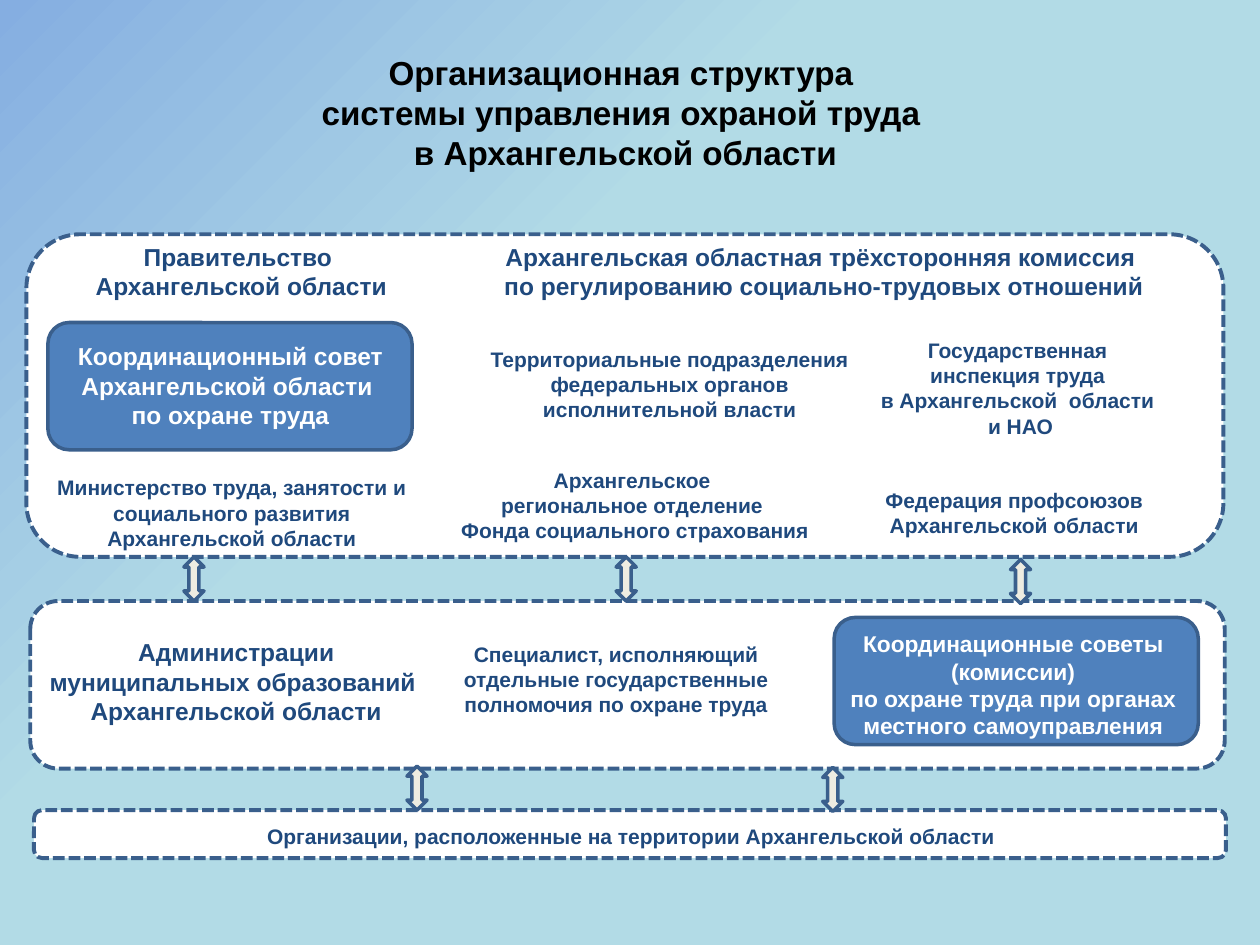
from copy import deepcopy
from pptx import Presentation
from pptx import util as u
from pptx.dml import color
from pptx.enum import dml, shapes, text
from pptx.oxml import ns

NAVY, WHITE, EDGE = "1F497D", "FFFFFF", "3A5F8C"


def rgb(value):
    return color.RGBColor.from_string(value)


class Deck:
    font = {"name": "Arial", "bold": True}
    frame = {"word_wrap": True, "auto_size": text.MSO_AUTO_SIZE.SHAPE_TO_FIT_TEXT}

    def __init__(self, prs):
        self.s = prs.slides.add_slide(prs.slide_layouts[6])

    def background(self, start, end, stop, angle):
        fill = self.s.background.fill
        fill.gradient()
        fill.gradient_angle = angle
        for gs, value, position in zip(fill.gradient_stops, (start, end), (0, stop)):
            gs.color.rgb = rgb(value)
            gs.position = position

    def shape(self, kind, box, fill, width, dash=None):
        sp = self.s.shapes.add_shape(kind, *map(u.Inches, box))
        sp.shadow.inherit = False
        sp.fill.solid()
        sp.fill.fore_color.rgb = rgb(fill)
        sp.line.color.rgb = rgb(EDGE)
        sp.line.width = u.Pt(width)
        if dash:
            sp.line.dash_style = dash

    def panel(self, *box):
        self.shape(shapes.MSO_SHAPE.FLOWCHART_ALTERNATE_PROCESS, box, WHITE, 2.25,
                   dml.MSO_LINE.SQUARE_DOT)

    def council(self, left, top):
        self.shape(shapes.MSO_SHAPE.FLOWCHART_ALTERNATE_PROCESS,
                   (left, top, 2.89, 1.01), "4F81BD", 2)

    def arrow(self, left, top):
        self.shape(shapes.MSO_SHAPE.UP_DOWN_ARROW, (left, top, 0.16, 0.35), "EEECE1", 2)

    def label(self, box, size, *paragraphs, ink=NAVY, anchor=text.MSO_ANCHOR.TOP):
        tf = self.s.shapes.add_textbox(*map(u.Inches, box)).text_frame
        for key, value in {**self.frame, "vertical_anchor": anchor}.items():
            setattr(tf, key, value)
        for i, words in enumerate(paragraphs):
            p = tf.add_paragraph() if i else tf.paragraphs[0]
            p.text = words
            p.alignment = text.PP_ALIGN.CENTER
            for r in p.runs:
                for key, value in {**self.font, "size": u.Pt(size)}.items():
                    setattr(r.font, key, value)
                r.font.color.rgb = rgb(ink)
            for br in p._p.findall(ns.qn("a:br")):
                br.append(deepcopy(p.runs[0]._r.rPr))


def main():
    prs = Presentation()
    prs.slide_width, prs.slide_height = u.Inches(10), u.Inches(7.5)
    d = Deck(prs)
    d.background("85AEE1", "B2DBE6", 0.38, 315)

    d.label((0.23, 0.36, 9.47, 1.06), 19, "Организационная структура ",
            "системы управления охраной труда \nв Архангельской области",
            ink="000000", anchor=text.MSO_ANCHOR.MIDDLE)

    d.panel(0.24, 4.77, 9.48, 1.33)
    d.panel(0.21, 1.86, 9.5, 2.56)
    d.panel(0.27, 6.43, 9.46, 0.38)
    d.council(0.38, 2.56)
    d.council(6.62, 4.9)

    for box, size, words in (
        ((0.22, 1.87, 3.39, 0.57), 14, "Правительство \nАрхангельской области"),
        ((3.88, 1.87, 5.32, 0.57), 14, "Архангельская областная трёхсторонняя комиссия \n"
         "по регулированию социально-трудовых отношений"),
        ((3.77, 2.7, 3.09, 0.71), 12,
         "Территориальные подразделения федеральных органов исполнительной власти"),
        ((6.72, 2.63, 2.76, 0.91), 12,
         "Государственная \nинспекция труда \nв Архангельской  области \nи НАО"),
        ((0.2, 3.72, 3.28, 0.71), 12,
         "Министерство труда, занятости и социального развития Архангельской области"),
        ((3.55, 3.66, 2.98, 0.71), 12,
         "Архангельское \nрегиональное отделение \nФонда социального страхования"),
        ((6.32, 3.82, 3.46, 0.5), 12, "Федерация профсоюзов Архангельской области"),
        ((0.18, 5.01, 3.39, 0.81), 14,
         "Администрации муниципальных образований \nАрхангельской области"),
        ((3.25, 5.04, 3.28, 0.71), 12,
         "Специалист, исполняющий отдельные государственные полномочия по охране труда"),
        ((1.74, 6.49, 6.54, 0.3), 12,
         "Организации, расположенные на территории Архангельской области"),
    ):
        d.label(box, size, words)

    d.label((0.1, 2.66, 3.46, 0.81), 14,
            "Координационный совет Архангельской области \nпо охране труда", ink=WHITE)
    d.label((6.31, 4.95, 3.46, 0.98), 13, "Координационные советы (комиссии)\n"
            "по охране труда при органах местного самоуправления", ink=WHITE)

    for left, top in ((1.46, 4.42), (4.89, 4.42), (8.02, 4.44), (3.23, 6.08), (6.53, 6.09)):
        d.arrow(left, top)

    prs.save("out.pptx")


if __name__ == "__main__":
    main()
